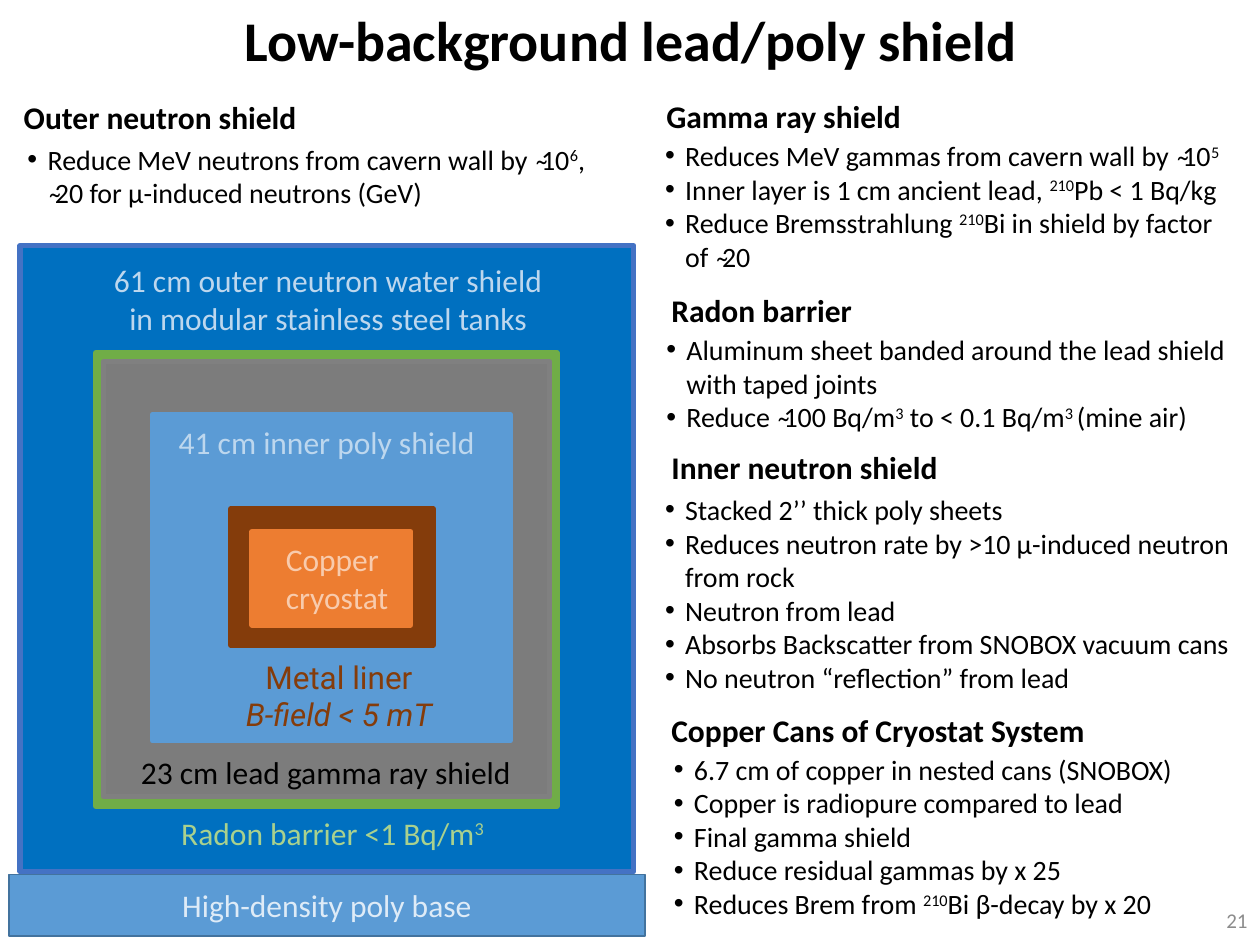
from pptx import Presentation
from pptx.dml.color import RGBColor
from pptx.enum.shapes import MSO_SHAPE
from pptx.enum.text import MSO_ANCHOR, PP_ALIGN
from pptx.oxml.ns import qn
from pptx.util import Inches, Pt
from lxml import etree

RECT = MSO_SHAPE.RECTANGLE
TOP, MIDDLE = MSO_ANCHOR.TOP, MSO_ANCHOR.MIDDLE
LEFT, CENTER, RIGHT = PP_ALIGN.LEFT, PP_ALIGN.CENTER, PP_ALIGN.RIGHT

COLORS = {
    "black": "000000", "page": "8C8C8C", "water": "0070C0", "frame": "4472C4",
    "radon": "70AD47", "radon_text": "A9D18E", "lead": "7C7C7C", "lead_line": "808080",
    "poly": "5B9BD5", "poly_line": "43739E", "poly_text": "BDD7EE", "base_text": "DEEBF7",
    "liner": "843C0B", "copper": "ED7D31", "copper_text": "F8CBAD",
}

# Content: text between ^ marks is superscript
# Nested layers, outermost first: box, fill, line, line width
LAYERS = [
    ((0.16, 1.95, 4.87, 4.97), "water", "frame", 3),
    ((0.76, 2.8, 3.66, 3.6), "radon", "radon", 3.25),
    ((0.82, 2.87, 3.54, 3.45), "lead", "lead_line", 3),
    ((1.21, 3.29, 2.84, 2.59), "poly", "poly", 3),
    ((1.83, 4.04, 1.61, 1.08), "liner", "liner", 3),
    ((2, 4.22, 1.26, 0.74), "copper", "copper", 3),
]
BASE = ((0.07, 6.94, 5.05, 0.49), "poly", "poly_line", 1)

# Layer labels: box, lines, format
LABELS = [
    ((0.62, 2.02, 3.97, 0.71),
     ["61 cm outer neutron water shield", "in modular stainless steel tanks"],
     dict(color="poly_text", align=CENTER)),
    ((1.34, 6.41, 2.64, 0.4), ["Radon barrier <1 Bq/m^3^"],
     dict(color="radon_text", wrap=False)),
    ((1.32, 3.31, 2.58, 0.4), ["41 cm inner poly shield"],
     dict(color="poly_text", wrap=False)),
    ((1.62, 5.17, 2.14, 0.71), ["Metal liner", "B-field < 5 mT"],
     dict(color="liner", align=CENTER, font="Roboto", italic_lines=(1,))),
    ((2.17, 4.24, 1.02, 0.71), ["Copper", "cryostat"],
     dict(color="copper_text", wrap=False)),
    ((1.02, 5.93, 3.17, 0.4), ["23 cm lead gamma ray shield"], dict(wrap=False)),
]

# Notes: heading, heading box, bullet box, bullet indent, level, bullets
NOTES = [
    ("Outer neutron shield", (0.09, 0.73, 2.5, 0.4), (-0.03, 1.08, 5.44, 0.64), 0.31, 0,
     ["Reduce MeV neutrons from cavern wall by  ̴10^6^,\v ̴20 for μ-induced neutrons (GeV)"]),
    ("Gamma ray shield", (5.19, 0.72, 2.6, 0.4), (5.03, 1.05, 4.88, 1.18), 0.31, 0,
     ["Reduces MeV gammas from cavern wall by  ̴10^5^",
      "Inner layer is 1 cm ancient lead, ^210^Pb < 1 Bq/kg",
      "Reduce Bremsstrahlung ^210^Bi in shield by factor of  ̴20"]),
    ("Radon barrier", (5.23, 2.26, 1.75, 0.4), (5.04, 2.59, 4.87, 0.91), 0.31, 0,
     ["Aluminum sheet banded around the lead shield with taped joints",
      "Reduce  ̴100 Bq/m^3^ to < 0.1 Bq/m^3 ^(mine air)"]),
    ("Inner neutron shield", (5.23, 3.51, 3.01, 0.4), (4.53, 3.86, 5.46, 2.05), 0.81, 1,
     ["Stacked 2’’ thick poly sheets",
      "Reduces neutron rate by >10 μ-induced neutron from rock",
      "Neutron from lead",
      "Absorbs Backscatter from SNOBOX vacuum cans",
      "No neutron “reflection” from lead"]),
    ("Copper Cans of Cryostat System", (5.23, 5.59, 3.74, 0.4), (5.03, 5.92, 4.73, 1.45),
     0.38, 0,
     ["6.7 cm of copper in nested cans (SNOBOX)",
      "Copper is radiopure compared to lead",
      "Final gamma shield",
      "Reduce residual gammas by x 25",
      "Reduces Brem from ^210^Bi β-decay by x 20"]),
]


def rgb(name):
    return RGBColor.from_string(COLORS[name])


def add_bullet(p, indent, level):
    p.level = level
    pPr = p._p.get_or_add_pPr()
    pPr.set("marL", str(Inches(indent)))
    pPr.set("indent", str(Inches(-0.16)))
    etree.SubElement(pPr, qn("a:buFont")).set("typeface", "Arial")
    etree.SubElement(pPr, qn("a:buChar")).set("char", "•")


def add_runs(p, text):
    """Add runs for marked-up text; \\v is a line break."""
    for i, part in enumerate(text.split("^")):
        for j, piece in enumerate(part.split("\v")):
            if j:
                p.add_line_break()
            if piece:
                r = p.add_run()
                r.text = piece
                if i % 2:
                    r._r.get_or_add_rPr().set("baseline", "30000")
                yield r


def write(sp, lines, size=18, color="black", font="Calibri", bold=False, align=LEFT,
          anchor=TOP, wrap=True, indent=None, level=0, italic_lines=(), spacing=None):
    tf = sp.text_frame
    tf.word_wrap = wrap
    tf.vertical_anchor = anchor
    for i, line in enumerate(lines):
        p = tf.paragraphs[0] if i == 0 else tf.add_paragraph()
        p.alignment = align
        if spacing:
            p.line_spacing = spacing
        if indent is not None:
            add_bullet(p, indent, level)
        for r in add_runs(p, line):
            r.font.name = font
            r.font.size = Pt(size)
            r.font.bold = bold
            r.font.italic = i in italic_lines
            r.font.color.rgb = rgb(color)


def add_text(s, box, lines, **fmt):
    write(s.shapes.add_textbox(*map(Inches, box)), lines, **fmt)


def add_layer(s, box, fill, line, width):
    sp = s.shapes.add_shape(RECT, *map(Inches, box))
    sp.shadow.inherit = False
    sp.fill.solid()
    sp.fill.fore_color.rgb = rgb(fill)
    sp.line.color.rgb = rgb(line)
    sp.line.width = Pt(width)
    return sp


def main():
    prs = Presentation()
    prs.slide_width, prs.slide_height = Inches(10), Inches(7.5)
    s = prs.slides.add_slide(prs.slide_layouts[6])

    # Title and page number
    add_text(s, (1.84, 0, 7.43, 0.68), ["Low-background lead/poly shield"],
             size=32, bold=True, anchor=MIDDLE, spacing=0.9)
    add_text(s, (7.75, 7.1, 2.25, 0.4), ["21"], size=12, color="page",
             align=RIGHT, anchor=MIDDLE)

    # Shield cross-section
    for layer in LAYERS:
        add_layer(s, *layer)
    write(add_layer(s, *BASE), ["High-density poly base"], color="base_text",
          align=CENTER, anchor=MIDDLE)
    for box, lines, fmt in LABELS:
        add_text(s, box, lines, **fmt)

    # Headings with bullets
    for heading, heading_box, box, indent, level, bullets in NOTES:
        add_text(s, heading_box, [heading], bold=True)
        add_text(s, box, bullets, size=16, indent=indent, level=level)

    prs.save("out.pptx")


if __name__ == "__main__":
    main()
